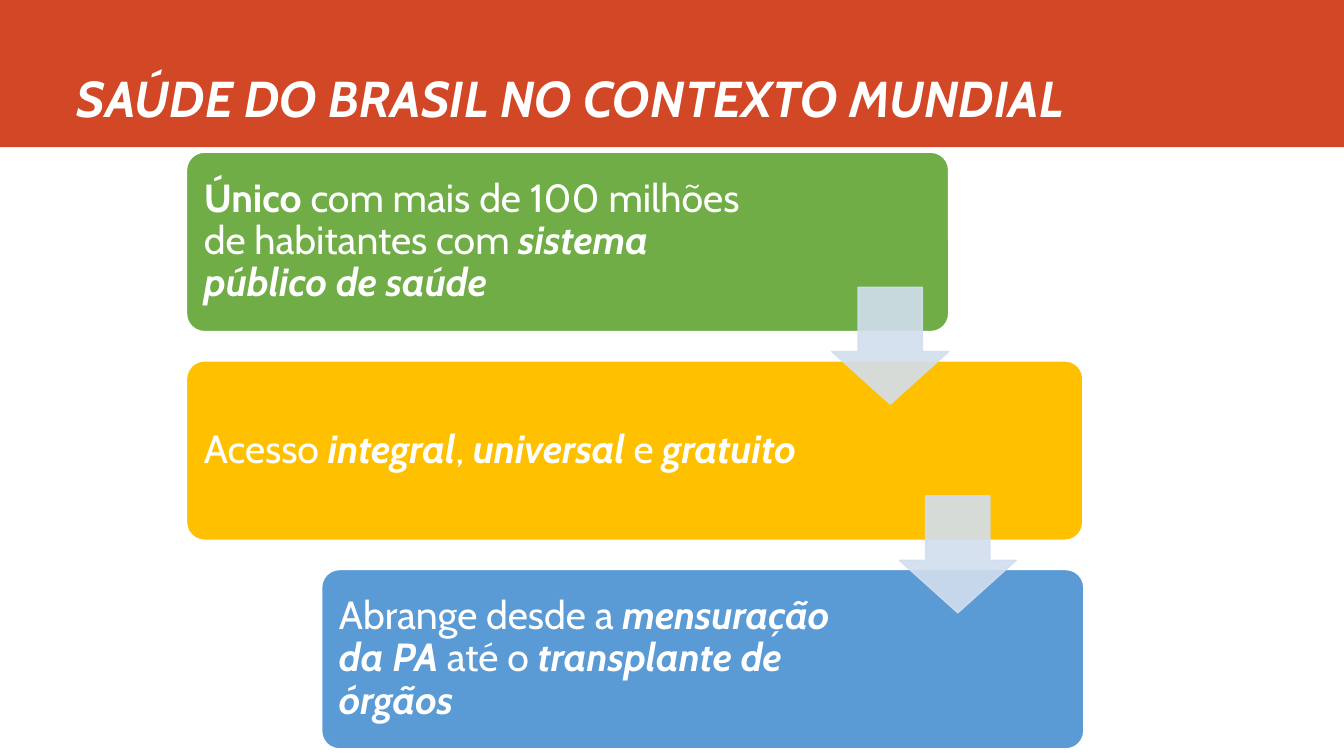
from lxml import etree
from pptx import Presentation
from pptx.dml.color import RGBColor
from pptx.enum.shapes import MSO_SHAPE
from pptx.enum.text import MSO_ANCHOR, MSO_AUTO_SIZE, PP_ALIGN
from pptx.oxml.ns import qn
from pptx.util import Inches, Pt

RECT, ROUND, ARROW = MSO_SHAPE.RECTANGLE, MSO_SHAPE.ROUNDED_RECTANGLE, MSO_SHAPE.DOWN_ARROW
MIDDLE, BOTTOM, LEFT = MSO_ANCHOR.MIDDLE, MSO_ANCHOR.BOTTOM, PP_ALIGN.LEFT
FIXED = MSO_AUTO_SIZE.NONE

WIDTH, HEIGHT = 13.33, 7.5
COL, ROW = 0.67, 2.07
GRID_LEFT, GRID_TOP = 1.85, 1.51
BOX_HEIGHT, ARROW_SIZE = 1.78, 1.16
ARROW_LEFT, ARROW_DROP = 8.25, 1.34
STRONG = {"bold": True, "italic": True}

STEPS = [
    (0, 7.56, 1.93, "70AD47", [
        ("Único", {"bold": True}),
        (" com mais de 100 milhões de habitantes com ", {}),
        ("sistema público de saúde", STRONG)]),
    (0, 8.89, 2.26, "FFC000", [
        ("Acesso ", {}), ("integral", STRONG), (", ", {}),
        ("universal", STRONG), (" e ", {}), ("gratuito", STRONG)]),
    (2, 7.56, 1.95, "5B9BD5", [
        ("Abrange desde a ", {}), ("mensuração da PA", STRONG),
        (" até o ", {}), ("transplante de órgãos", STRONG)]),
]


def rgb(value):
    """Return the colour for a hex string."""
    return RGBColor.from_string(value)


def add_text(p, text, size=28, bold=False, italic=False, color="FFFFFF", font="Cabin"):
    """Append one formatted run to a paragraph."""
    r = p.add_run()
    r.text = text
    r.font.name, r.font.size = font, Pt(size)
    r.font.bold, r.font.italic = bold, italic
    r.font.color.rgb = rgb(color)


def add_block(s, kind, box, fill, line=None, adjustments=()):
    """Add a filled preset shape at a left, top, width, height in inches."""
    sp = s.shapes.add_shape(kind, *map(Inches, box))
    sp.shadow.inherit = False
    sp.fill.solid()
    sp.fill.fore_color.rgb = rgb(fill)
    if line:
        sp.line.color.rgb = rgb(line)
        sp.line.width = Pt(1)
    else:
        sp.line.fill.background()
    for i, value in enumerate(adjustments):
        sp.adjustments[i] = value
    return sp


def add_title(s, text):
    """Place the title over a full-width band."""
    band = add_block(s, RECT, (0, 0, WIDTH, 1.46), "D24726")
    s.shapes.element.insert(2, band.element)
    title = s.shapes.title
    title.left, title.top, title.width, title.height = map(Inches, (0.66, 0, 11.76, 1.32))
    tf = title.text_frame
    tf.vertical_anchor, tf.auto_size, tf.word_wrap = BOTTOM, FIXED, True
    p = tf.paragraphs[0]
    p.alignment = LEFT
    add_text(p, text, size=36, **STRONG)


def add_step(s, row, col, width, right_inset, fill, runs):
    """Add one rounded step with its text on a grid row."""
    box = (GRID_LEFT + col * COL, GRID_TOP + row * ROW, width, BOX_HEIGHT)
    sp = add_block(s, ROUND, box, fill, "FFFFFF", [0.1])
    tf = sp.text_frame
    tf.word_wrap, tf.vertical_anchor = True, MIDDLE
    tf.margin_left = tf.margin_top = tf.margin_bottom = Inches(0.12)
    tf.margin_right = Inches(right_inset)
    p = tf.paragraphs[0]
    p.alignment, p.line_spacing = LEFT, 0.9
    for text, style in runs:
        add_text(p, text, **style)


def add_arrow(s, row):
    """Add the translucent arrow leading from one row to the next."""
    box = (ARROW_LEFT + row * COL, GRID_TOP + row * ROW + ARROW_DROP, ARROW_SIZE, ARROW_SIZE)
    sp = add_block(s, ARROW, box, "D2DEEF", "D2DEEF", [0.45, 0.55])
    sp.adjustments[0], sp.adjustments[1] = 0.55, 0.45
    for color in sp.element.spPr.iter(qn("a:srgbClr")):
        etree.SubElement(color, qn("a:alpha"), val="90000")


def main():
    """Build and save the slide."""
    prs = Presentation()
    prs.slide_width, prs.slide_height = Inches(WIDTH), Inches(HEIGHT)
    s = prs.slides.add_slide(prs.slide_layouts[5])
    add_title(s, "SAÚDE DO BRASIL NO CONTEXTO MUNDIAL")
    for row, step in enumerate(STEPS):
        add_step(s, row, *step)
    for row in range(len(STEPS) - 1):
        add_arrow(s, row)
    prs.save("out.pptx")


if __name__ == "__main__":
    main()
